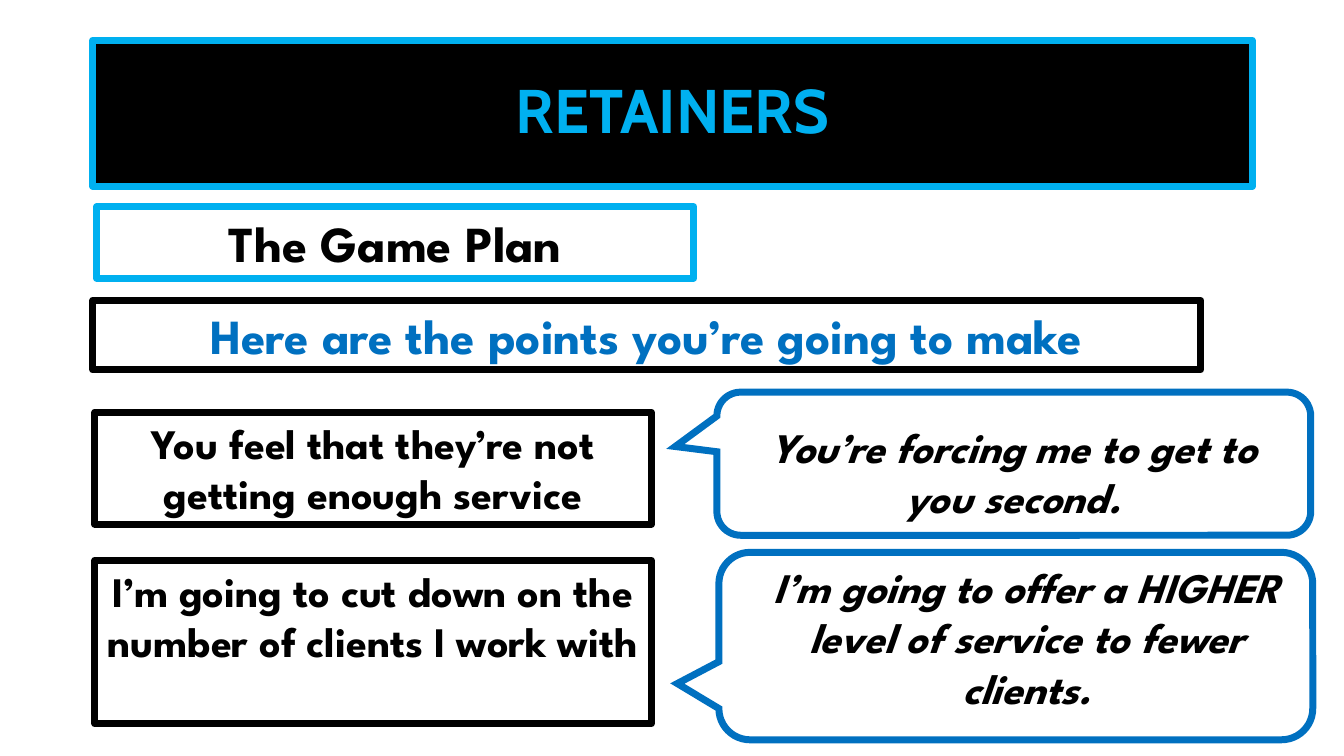
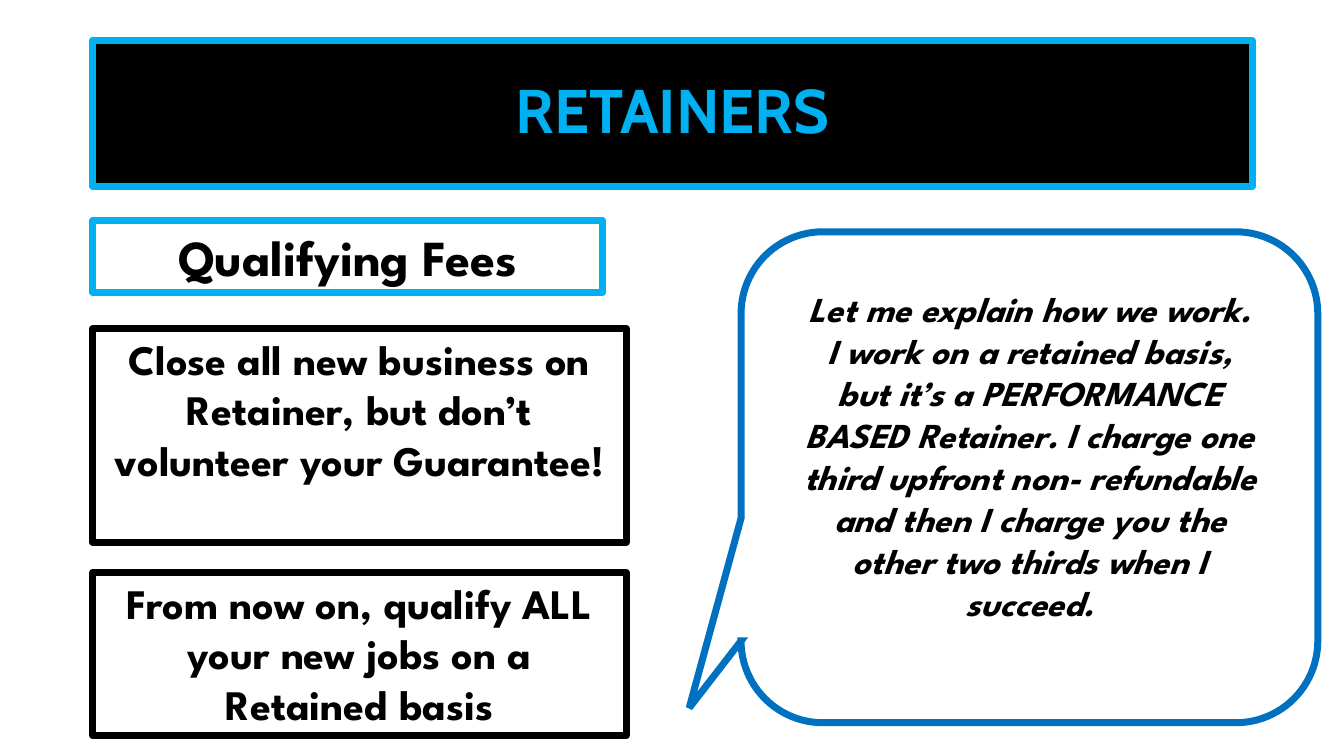
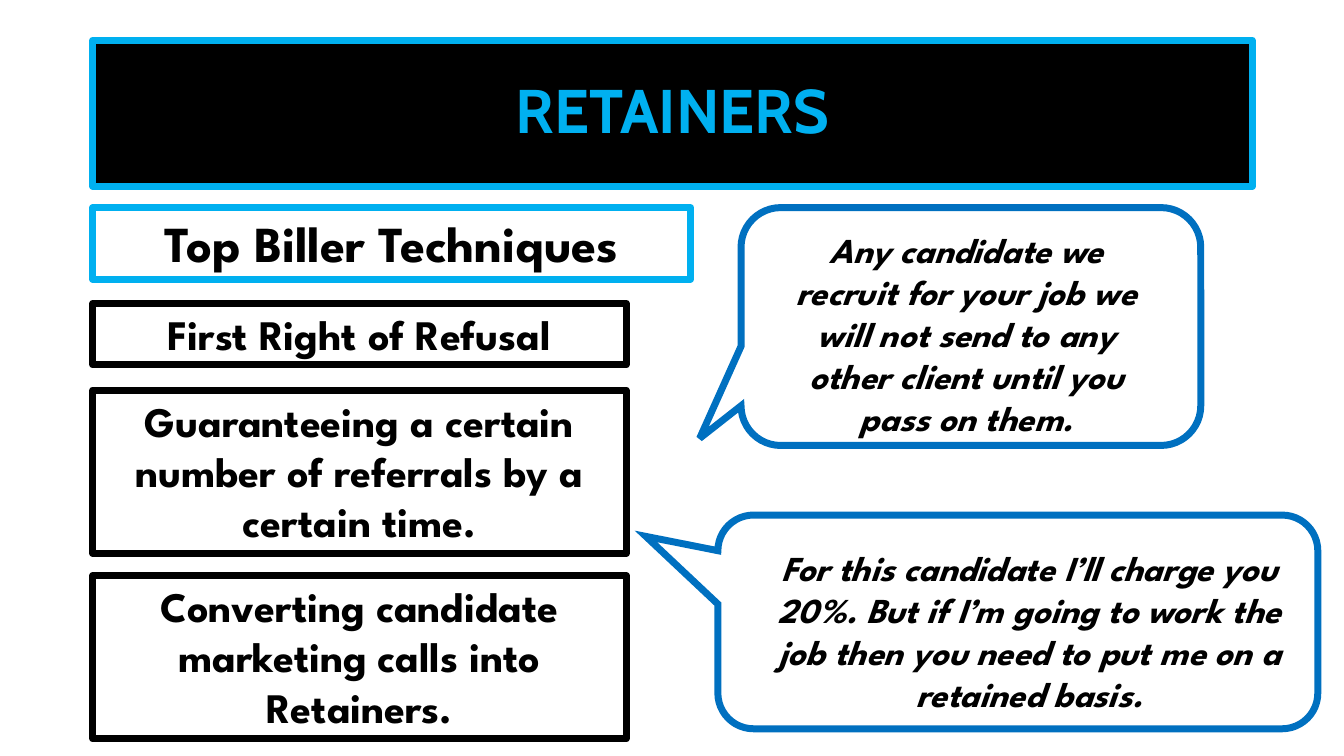
from lxml.etree import SubElement
from pptx import Presentation
from pptx.dml.color import RGBColor
from pptx.enum.shapes import MSO_SHAPE as Preset
from pptx.enum.text import MSO_ANCHOR as Anchor, MSO_AUTO_SIZE as AutoSize, PP_ALIGN as Align
from pptx.oxml.ns import qn
from pptx.util import Emu, Pt

PX = 9144  # 100 px to the inch
BLACK, SKY, BLUE = "000000", "00B0F0", "0070C0"
HEADING = dict(name="Cabin", size=Pt(44), bold=True)
TOPIC = dict(name="League Spartan", size=Pt(36), bold=True)
LEAD = dict(TOPIC, size=Pt(35))
POINT = dict(TOPIC, size=Pt(30))
QUOTE = dict(POINT, italic=True)
SMALL_QUOTE = dict(QUOTE, size=Pt(25))
LEFT, POINT_WIDTH = 92, 529


def px(*lengths):
    return [Emu(length * PX) for length in lengths]


def colour(value):
    return RGBColor.from_string(value)


def set_outline(shape, value):
    shape.line.color.rgb = colour(value)
    shape.line.width = Pt(5)


def write(shape, text, style, ink=BLACK, anchor=Anchor.TOP, grow=AutoSize.SHAPE_TO_FIT_TEXT):
    frame = shape.text_frame
    frame.word_wrap = True
    frame.vertical_anchor = anchor
    frame.auto_size = grow
    para = frame.paragraphs[0]
    para.alignment = Align.CENTER
    span = para.add_run()
    span.text = text
    for name, value in style.items():
        setattr(span.font, name, value)
    span.font.color.rgb = colour(ink)
    return para


def add_outlined(page, preset, box, line):
    shape = page.shapes.add_shape(preset, *px(*box))
    shape.shadow.inherit = False
    shape.fill.background()
    set_outline(shape, line)
    return shape


def add_box(page, box, text, style=POINT, line=BLACK, ink=BLACK):
    write(add_outlined(page, Preset.RECTANGLE, box, line), text, style, ink)


def add_quote(page, bubble_box, tip, text_box, text, style=SMALL_QUOTE):
    """Speech bubble with sharp corners; tip is its pointer, relative to the centre."""
    bubble = add_outlined(page, Preset.ROUNDED_RECTANGULAR_CALLOUT, bubble_box, BLUE)
    bubble.adjustments[0], bubble.adjustments[1] = tip
    SubElement(bubble.line._get_or_add_ln(), qn("a:miter"), lim="800000")
    write(page.shapes.add_textbox(*px(*text_box)), text, style)


def add_page(deck, topic, topic_box):
    """Slide with the shared title band and its topic box."""
    page = deck.slides.add_slide(deck.slide_layouts[5])
    title = page.shapes.title
    title.left, title.top, title.width, title.height = px(LEFT, 40, 1150, 145)
    title.fill.solid()
    title.fill.fore_color.rgb = colour(BLACK)
    set_outline(title, SKY)
    para = write(title, "RETAINERS", HEADING, SKY, Anchor.MIDDLE, AutoSize.NONE)
    para.line_spacing = 0.9
    add_box(page, topic_box, topic, TOPIC, SKY)
    return page


def add_game_plan(deck):
    page = add_page(deck, "The Game Plan", (96, 205, 592, 71))
    add_box(page, (LEFT, 298, 1099, 69), "Here are the points you’re going to make", LEAD, ink=BLUE)
    add_box(page, (94, 409, 552, 111), "You feel that they’re not getting enough service")
    add_box(page, (94, 556, 552, 162), "I’m going to cut down on the number of clients I work with")
    add_quote(page, (711, 389, 589, 142), (-0.57, -0.12), (722, 413, 567, 111),
              "You’re forcing me to get to you second.", QUOTE)
    add_quote(page, (713, 548, 589, 186), (-0.57, 0.2), (735, 552, 567, 162),
              "I’m going to offer a HIGHER level of service to fewer clients.", QUOTE)


def add_qualifying_fees(deck):
    page = add_page(deck, "Qualifying Fees", (LEFT, 219, 506, 71))
    add_box(page, (LEFT, 326, POINT_WIDTH, 212),
            "Close all new business on Retainer, but don’t volunteer your Guarantee!")
    add_box(page, (LEFT, 568, POINT_WIDTH, 162),
            "From now on, qualify ALL your new jobs on a Retained basis")
    add_quote(page, (735, 230, 572, 487), (-0.59, 0.47), (786, 280, 471, 389),
              "Let me explain how we work. I work on a retained basis, but it’s a PERFORMANCE "
              "BASED Retainer. I charge one third upfront non- refundable and then I charge you "
              "the other two thirds when I succeed.")


def add_techniques(deck):
    page = add_page(deck, "Top Biller Techniques", (LEFT, 206, 593, 71))
    points = [
        (301, 61, "First Right of Refusal"),
        (387, 162, "Guaranteeing a certain number of referrals by a certain time."),
        (571, 162, "Converting candidate marketing calls into Retainers."),
    ]
    for top, height, text in points:
        add_box(page, (LEFT, top, POINT_WIDTH, height), text)
    add_quote(page, (735, 206, 456, 236), (-0.59, 0.47), (774, 222, 369, 220),
              "Any candidate we recruit for your job we will not send to any other client "
              "until you pass on them.")
    add_quote(page, (712, 511, 595, 212), (-0.62, -0.4), (735, 537, 572, 178),
              "For this candidate I’ll charge you 20%. But if I’m going to work the job then "
              "you need to put me on a retained basis.")


def main():
    deck = Presentation()
    deck.slide_width, deck.slide_height = px(1333, 750)
    add_game_plan(deck)
    add_qualifying_fees(deck)
    add_techniques(deck)
    deck.save("out.pptx")


if __name__ == "__main__":
    main()
